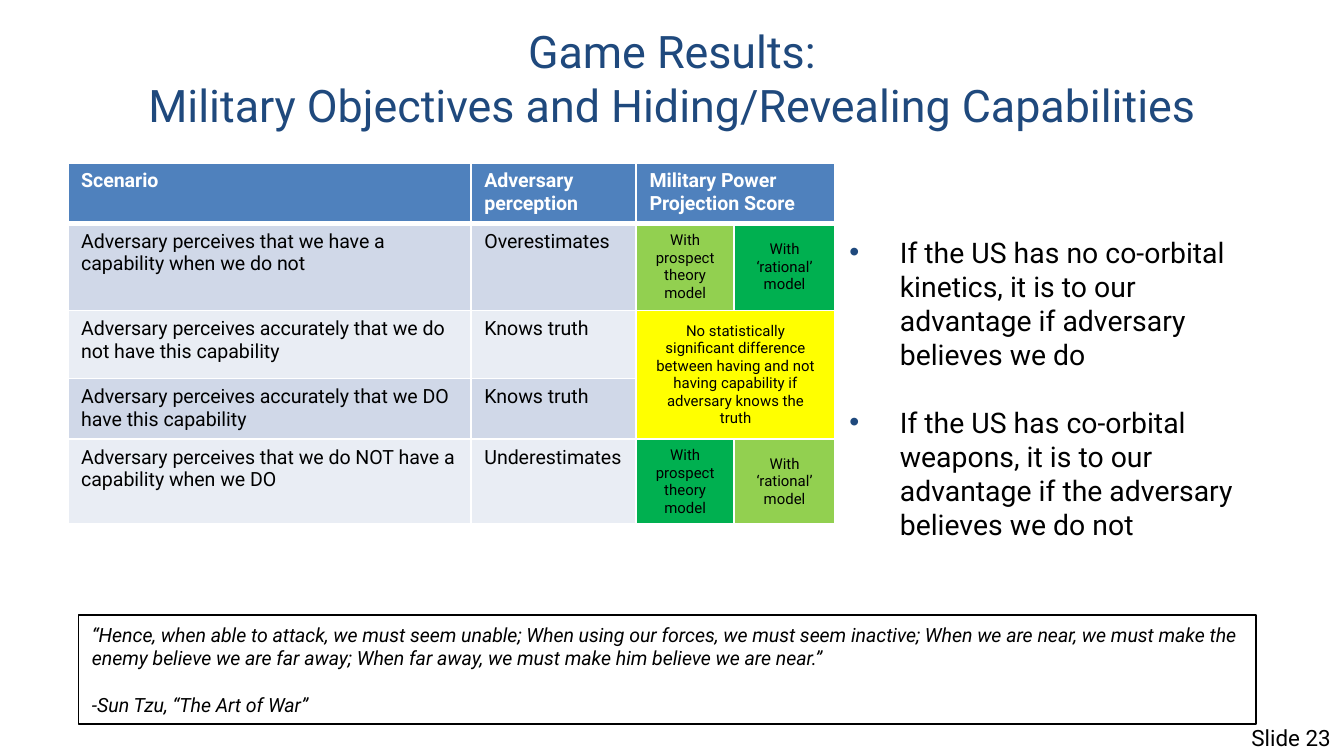
import pptx
import pptx.util
import pptx.dml.color
import pptx.enum.shapes
import pptx.enum.text
import pptx.oxml
import pptx.oxml.ns

Pt = pptx.util.Pt
RGB = pptx.dml.color.RGBColor
ALIGN = pptx.enum.text.PP_ALIGN
ANCHOR = pptx.enum.text.MSO_ANCHOR
NS = pptx.oxml.ns.nsdecls("a")

BLACK = RGB(0, 0, 0)
WHITE = RGB(255, 255, 255)
NAVY = RGB(0x1F, 0x49, 0x7D)
BLUE = RGB(0x4F, 0x81, 0xBD)
DARK_BAND = RGB(0xD0, 0xD8, 0xE8)
LIGHT_BAND = RGB(0xE9, 0xED, 0xF4)
LIME = RGB(0x92, 0xD0, 0x50)
GREEN = RGB(0, 0xB0, 0x50)
YELLOW = RGB(255, 255, 0)

TITLE = "Game Results:\vMilitary Objectives and Hiding/Revealing Capabilities"
HEADERS = ["Scenario", "Adversary perception", "Military Power Projection Score"]
SCENARIOS = [
    ("Adversary perceives that we have a capability when we do not", "Overestimates"),
    ("Adversary perceives accurately that we do not have this capability", "Knows truth"),
    ("Adversary perceives accurately that we DO have this capability", "Knows truth"),
    ("Adversary perceives that we do NOT have a capability when we DO", "Underestimates"),
]
PROSPECT = "With prospect theory model"
RATIONAL = "With ‘rational’ model"
SCORES = [
    (1, 2, PROSPECT, LIME),
    (1, 3, RATIONAL, GREEN),
    (2, 2, "No statistically significant difference between having and not having "
           "capability if adversary knows the truth", YELLOW),
    (4, 2, PROSPECT, GREEN),
    (4, 3, RATIONAL, LIME),
]
MERGES = [((0, 2), (0, 3)), ((2, 2), (3, 3))]
COL_WIDTHS = [216, 88.5, 52.5, 54]
ROW_HEIGHTS = [31.5, 46.8, 36.5, 32.2, 45.5]
FINDINGS = [
    "If the US has no co-orbital kinetics, it is to our advantage if adversary believes we do",
    "If the US has co-orbital weapons, it is to our advantage if the adversary believes we do not",
]
QUOTE = [
    "“Hence, when able to attack, we must seem unable; When using our forces, we must seem "
    "inactive; When we are near, we must make the enemy believe we are far away; When far away, "
    "we must make him believe we are near.”",
    "-Sun Tzu, “The Art of War”",
]


def write(tf, paragraphs, size, color=BLACK, align=ALIGN.LEFT, gap=0, **style):
    tf.word_wrap = True
    for i, text in enumerate(paragraphs):
        p = tf.paragraphs[0] if i == 0 else tf.add_paragraph()
        p.text = text
        p.alignment = align
        p.space_before = Pt(gap if i else 0)
        for r in p.runs:
            r.font.color.rgb = color
            for name, value in {"name": "Roboto", "size": Pt(size), **style}.items():
                setattr(r.font, name, value)


def add_text(s, box, paragraphs, size, anchor=ANCHOR.TOP, **style):
    tf = s.shapes.add_textbox(*map(Pt, box)).text_frame
    tf.vertical_anchor = anchor
    write(tf, paragraphs, size, **style)
    return tf


def add_bullet(p, indent):
    pPr = p._p.get_or_add_pPr()
    pPr.set("marL", str(Pt(indent)))
    pPr.set("indent", str(-Pt(indent)))
    for xml in (f'<a:buClr {NS}><a:srgbClr val="{NAVY}"/></a:buClr>',
                f'<a:buFont {NS} typeface="Arial"/>',
                f'<a:buChar {NS} char="•"/>'):
        pPr.append(pptx.oxml.parse_xml(xml))


def set_borders(cell, bottom):
    tcPr = cell._tc.get_or_add_tcPr()
    widths = {"lnL": 1, "lnR": 1, "lnT": 1, "lnB": bottom}
    for i, (tag, width) in enumerate(widths.items()):
        tcPr.insert(i, pptx.oxml.parse_xml(
            f'<a:{tag} {NS} w="{Pt(width)}"><a:solidFill><a:srgbClr val="{WHITE}"/>'
            f'</a:solidFill></a:{tag}>'))


def fill_cell(cell, text, fill, size=10.5, anchor=ANCHOR.TOP, **style):
    cell.fill.solid()
    cell.fill.fore_color.rgb = fill
    cell.vertical_anchor = anchor
    write(cell.text_frame, [text], size, **style)


def add_results(s):
    table = s.shapes.add_table(len(ROW_HEIGHTS), len(COL_WIDTHS), Pt(36.3), Pt(87.2),
                               Pt(sum(COL_WIDTHS)), Pt(sum(ROW_HEIGHTS))).table
    for column, width in zip(table.columns, COL_WIDTHS):
        column.width = Pt(width)
    for row, height in zip(table.rows, ROW_HEIGHTS):
        row.height = Pt(height)
    for first, last in MERGES:
        table.cell(*first).merge(table.cell(*last))
    for c, text in enumerate(HEADERS):
        fill_cell(table.cell(0, c), text, BLUE, color=WHITE, bold=True)
    for r, texts in enumerate(SCENARIOS, 1):
        for c, text in enumerate(texts):
            fill_cell(table.cell(r, c), text, DARK_BAND if r % 2 else LIGHT_BAND, bold=False)
    for r, c, text, fill in SCORES:
        fill_cell(table.cell(r, c), text, fill, size=8, anchor=ANCHOR.MIDDLE,
                  align=ALIGN.CENTER, bold=False)
    for r in range(len(ROW_HEIGHTS)):
        for c in range(len(COL_WIDTHS)):
            set_borders(table.cell(r, c), 1 if r else 3)


def add_quote(s):
    sp = s.shapes.add_shape(pptx.enum.shapes.MSO_SHAPE.RECTANGLE,
                            *map(Pt, (42.2, 329.5, 630.7, 58.3)))
    sp.shadow.inherit = False
    sp.fill.background()
    sp.line.color.rgb = BLACK
    sp.line.width = Pt(0.75)
    sp.text_frame.vertical_anchor = ANCHOR.MIDDLE
    write(sp.text_frame, QUOTE, 10.5, gap=12.3, italic=True)


def main():
    prs = pptx.Presentation()
    prs.slide_width, prs.slide_height = Pt(720), Pt(405)
    s = prs.slides.add_slide(prs.slide_layouts[6])
    add_text(s, (394, 384.5, 326, 21.6), ["Slide 23"], 12, align=ALIGN.RIGHT)
    add_text(s, (36, 0, 648, 83.5), [TITLE], 24, anchor=ANCHOR.MIDDLE,
             color=NAVY, align=ALIGN.CENTER)
    findings = add_text(s, (448, 122.4, 236, 160), FINDINGS, 15.2, gap=18)
    for p in findings.paragraphs:
        add_bullet(p, 27)
    add_quote(s)
    add_results(s)
    prs.save("out.pptx")


if __name__ == "__main__":
    main()
